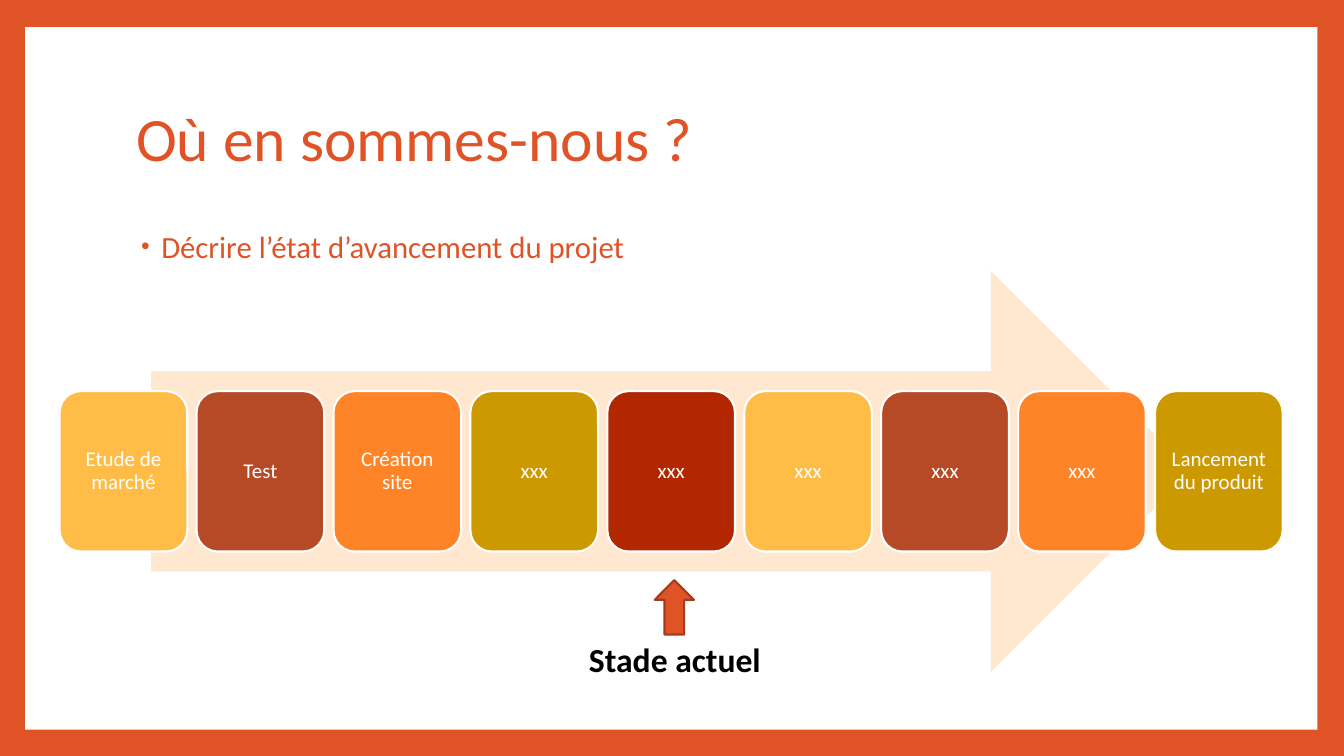
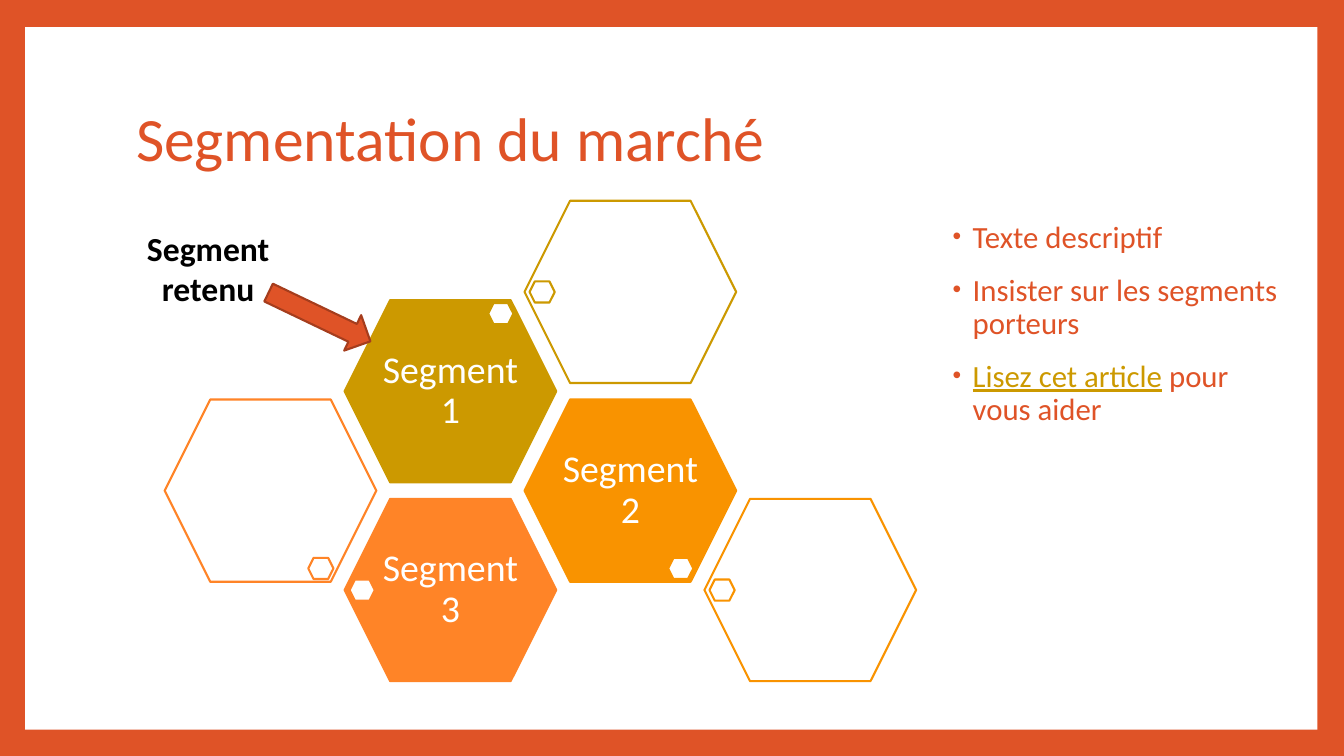
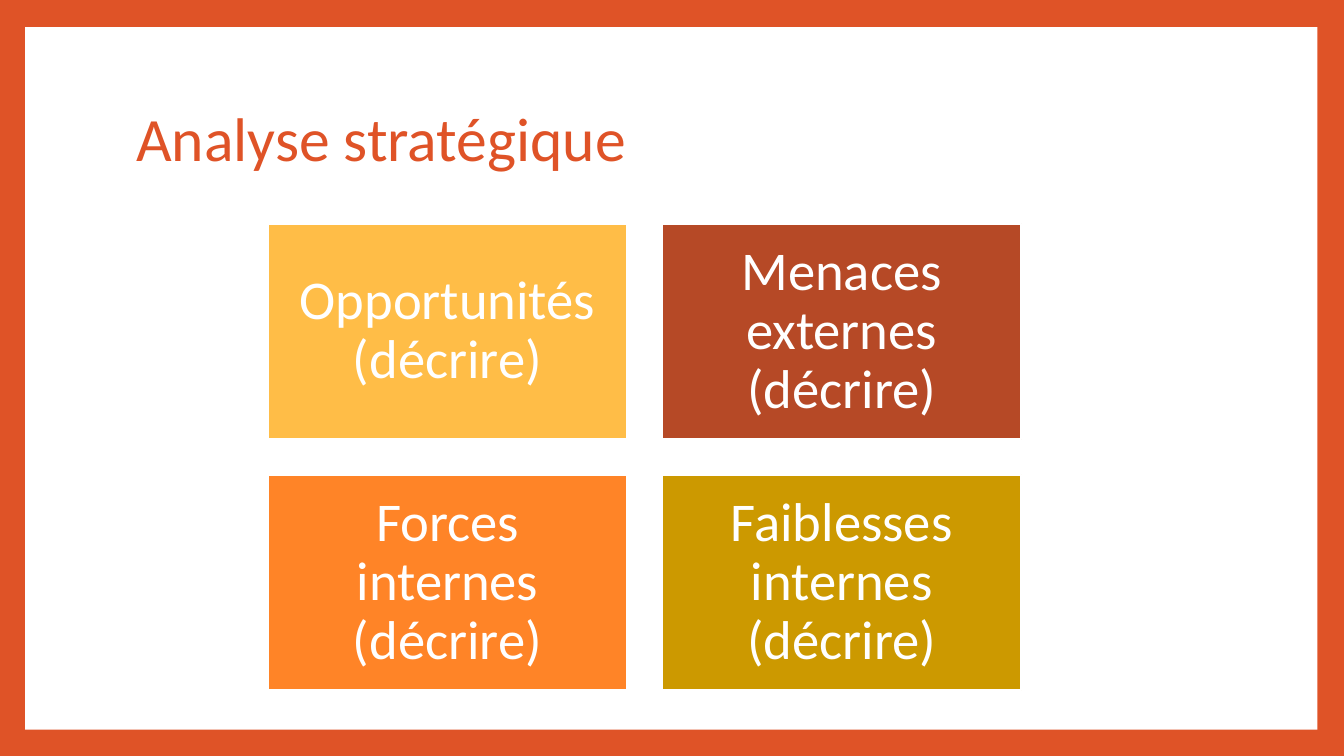
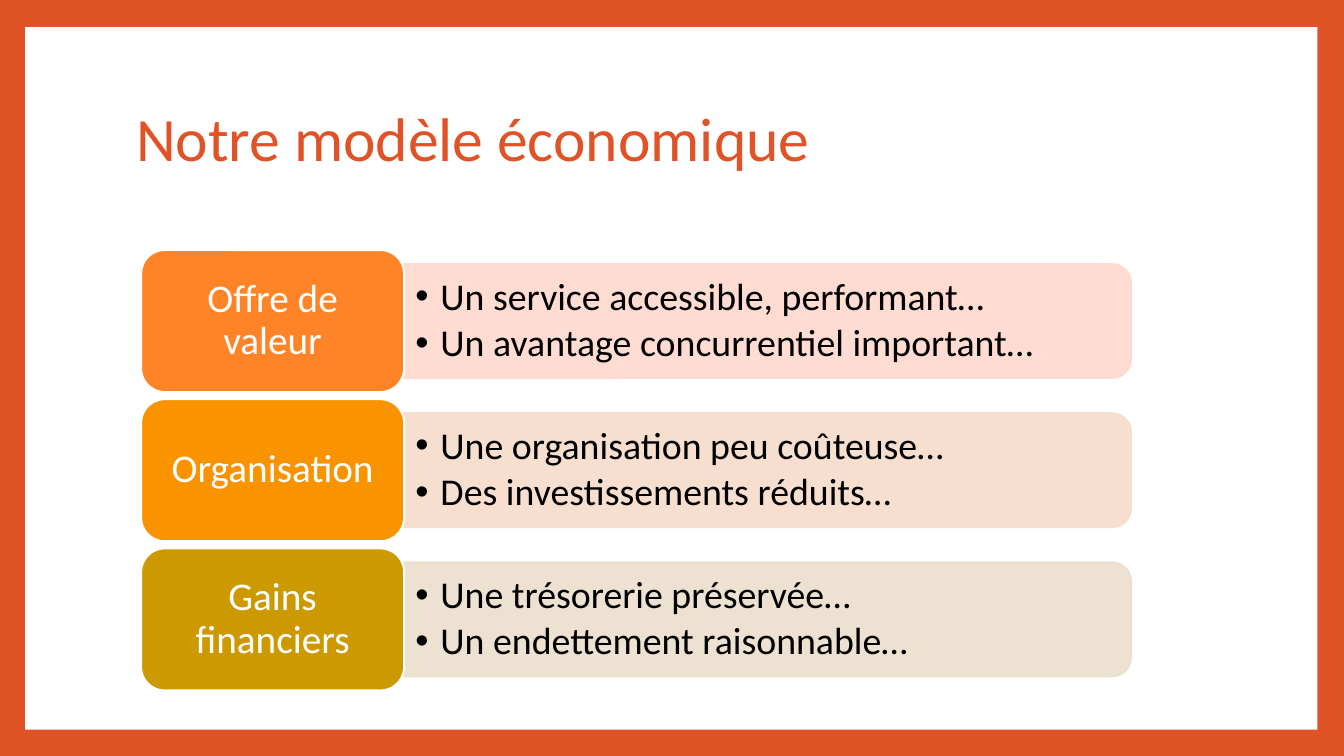
from pptx import Presentation
from pptx.dml.color import RGBColor
from pptx.enum.shapes import MSO_SHAPE as Form
from pptx.enum.text import MSO_ANCHOR as Anchor, PP_ALIGN as Align
from pptx.oxml.ns import qn
from pptx.util import Inches, Pt
from lxml.etree import SubElement

FLAME = RGBColor(0xDF, 0x53, 0x27)
RUST = RGBColor(0xA5, 0x3D, 0x1D)
WHITE = RGBColor(0xFF, 0xFF, 0xFF)
BLACK = RGBColor(0, 0, 0)
PEACH = RGBColor(0xFF, 0xE8, 0xCF)
YELLOW = RGBColor(0xFF, 0xBD, 0x47)
BRICK = RGBColor(0xB6, 0x49, 0x26)
ORANGE = RGBColor(0xFF, 0x84, 0x27)
GOLD = RGBColor(0xCC, 0x99, 0x00)
CRIMSON = RGBColor(0xB2, 0x26, 0x00)
AMBER = RGBColor(0xF9, 0x93, 0x00)
PALE_ROSE = RGBColor(0xFF, 0xD9, 0xCD)
PALE_ORANGE = RGBColor(0xF7, 0xDC, 0xCB)
PALE_GOLD = RGBColor(0xEC, 0xDE, 0xCC)

COLUMNS, ROWS = 160, 90
DEFAULT_INSETS = (1.2, 0.6)


class Deck:
    font = "Calibri"
    outline = Pt(1.5)

    def __init__(self):
        self.show = Presentation()
        self.show.slide_width = Inches(13.33)
        self.show.slide_height = Inches(7.5)
        backdrop = self.show.slide_master.background.fill
        backdrop.solid()
        backdrop.fore_color.rgb = FLAME

    def across(self, columns):
        return round(self.show.slide_width * columns / COLUMNS)

    def down(self, rows):
        return round(self.show.slide_height * rows / ROWS)

    def place(self, frame):
        return [size(part) for size, part in
                zip((self.across, self.down) * 2, frame)]

    def page(self, title):
        self.slide = self.show.slides.add_slide(self.show.slide_layouts[6])
        self.shape(Form.RECTANGLE, (3, 3.24, 153.84, 83.64), WHITE)
        heading = self.text((15, 8, 129.6, 17.8), Anchor.MIDDLE)
        self.fill_in(heading, [title], 44, FLAME, line_spacing=0.9)

    def shape(self, form, frame, fill, line=None, turn=0, opacity=None):
        shape = self.slide.shapes.add_shape(form, *self.place(frame))
        shape.shadow.inherit = False
        shape.rotation = turn
        shape.fill.solid()
        shape.fill.fore_color.rgb = fill
        if line is None:
            shape.line.fill.background()
        else:
            shape.line.color.rgb = line
            shape.line.width = self.outline
        if opacity:
            for tone in shape._element.spPr.iter(qn("a:srgbClr")):
                SubElement(tone, qn("a:alpha"), val=str(opacity * 1000))
        return shape

    def text(self, frame, anchor=Anchor.TOP):
        box = self.slide.shapes.add_textbox(*self.place(frame))
        return self.fit(box, DEFAULT_INSETS, anchor)

    def fit(self, shape, insets, anchor=Anchor.MIDDLE):
        side, edge = self.across(insets[0]), self.down(insets[1])
        settings = {"word_wrap": True, "vertical_anchor": anchor,
                    "margin_left": side, "margin_right": side,
                    "margin_top": edge, "margin_bottom": edge}
        for name, value in settings.items():
            setattr(shape.text_frame, name, value)
        return shape

    def fill_in(self, shape, lines, size, color, bold=False, **spacing):
        frame = shape.text_frame
        paragraphs = [frame.paragraphs[0]]
        paragraphs += [frame.add_paragraph() for _ in lines[1:]]
        for paragraph, line in zip(paragraphs, lines):
            for name, value in spacing.items():
                setattr(paragraph, name, value)
            for part in [line] if isinstance(line, str) else line:
                words, accent = (part, None) if isinstance(part, str) else part
                run = paragraph.add_run()
                run.text = words
                settings = {"name": self.font, "size": Pt(size), "bold": bold,
                            "underline": True if accent else None}
                for name, value in settings.items():
                    setattr(run.font, name, value)
                run.font.color.rgb = accent or color
        return paragraphs

    def bullet(self, paragraphs, color, hang, percent):
        for paragraph in paragraphs:
            layout = paragraph._p.get_or_add_pPr()
            layout.set("marL", str(self.across(3)))
            layout.set("indent", str(-self.across(hang)))
            tint = SubElement(layout, qn("a:buClr"))
            SubElement(tint, qn("a:srgbClr"), val=str(color))
            SubElement(layout, qn("a:buSzPct"), val=str(percent * 1000))
            SubElement(layout, qn("a:buFont"), typeface="Arial")
            SubElement(layout, qn("a:buChar"), char="•")

    def body(self, frame, lines):
        points = self.fill_in(self.text(frame), lines, 22, FLAME,
                              line_spacing=0.9, space_before=Pt(14))
        self.bullet(points, FLAME, 2.4, 80)

    def block(self, form, frame, label, size, fill, line=WHITE,
              insets=(0.72, 0.72)):
        block = self.fit(self.shape(form, frame, fill, line), insets)
        self.fill_in(block, [label], size, WHITE,
                     alignment=Align.CENTER, line_spacing=0.9)

    def detail_bar(self, frame, lines, fill):
        left, top, width, height = frame
        shift = (width - height) / 2
        self.shape(Form.ROUND_2_SAME_RECTANGLE,
                   (left + shift, top - shift, height, width),
                   fill, fill, 90, 90)
        details = self.fit(self.text(frame), (1.32, 0.72))
        points = self.fill_in(details, lines, 27, BLACK,
                              line_spacing=0.9, space_after=Pt(4))
        self.bullet(points, BLACK, 3, 100)

    def pointer(self, left, top, length, turn):
        self.shape(Form.RIGHT_ARROW, (left, top, length, 4.68),
                   FLAME, RUST, turn)

    def caption(self, left, top, words):
        note = self.text((left, top, 23.16, 10.92))
        self.fill_in(note, [words], 24, BLACK, True, alignment=Align.CENTER)


def progress(deck):
    deck.page("Où en sommes-nous ?")
    deck.body((15, 27, 129.6, 53), ["Décrire l’état d’avancement du projet"])
    deck.shape(Form.RIGHT_ARROW, (18, 32.25, 123.85, 47.75), PEACH)
    steps = ["Etude de marché", "Test", "Création site", *["xxx"] * 5,
             "Lancement du produit"]
    tones = [YELLOW, BRICK, ORANGE, GOLD, CRIMSON]
    for index, step in enumerate(steps):
        deck.block(Form.ROUNDED_RECTANGLE,
                   (7.1 + 16.3 * index, 46.56, 15.2, 19.1),
                   step, 15, tones[index % len(tones)])
    deck.pointer(77.04, 69.96, 6.48, 270)
    deck.caption(68.76, 75.48, "Stade actuel")


def segmentation(deck):
    deck.page("Segmentation du marché")
    left, low, high = (0.6, 9.6), (17.1, 18.85), (17.1, 0.36)
    cells = [(1, 3, "Segment 3", ORANGE, left), (0, 2, "", ORANGE, low),
             (2, 2, "Segment 2", AMBER, low), (3, 3, "", AMBER, left),
             (1, 1, "Segment 1", GOLD, high), (2, 0, "", GOLD, left)]
    for column, row, segment, tone, (dot_x, dot_y) in cells:
        x, y = 19.6 + 21.42 * column, 23.9 + 11.83 * row
        cell = (x, y, 25.2, 21.7)
        if segment:
            deck.block(Form.HEXAGON, cell, segment, 27, tone, tone, (0, 0.48))
        else:
            deck.shape(Form.HEXAGON, cell, WHITE, tone)
        deck.shape(Form.HEXAGON, (x + dot_x, y + dot_y, 3, 2.52), WHITE, tone)
    deck.body((111.6, 25.8, 41.9, 53),
              ["Texte descriptif", "Insister sur les segments porteurs",
               [("Lisez cet article", GOLD), " pour vous aider"]])
    deck.pointer(31.32, 35.4, 13.44, 25.6)
    deck.caption(13.2, 26.52, "Segment retenu")


def strategy(deck):
    deck.page("Analyse stratégique")
    quadrants = [("Opportunités (décrire)", YELLOW),
                 ("Menaces externes (décrire)", BRICK),
                 ("Forces internes (décrire)", ORANGE),
                 ("Faiblesses internes (décrire)", GOLD)]
    for index, (label, tone) in enumerate(quadrants):
        row, column = divmod(index, 2)
        deck.block(Form.RECTANGLE,
                   (31.92 + 46.92 * column, 26.64 + 29.88 * row, 42.72, 25.68),
                   label, 39, tone, insets=(1.92, 1.92))


def business_model(deck):
    deck.page("Notre modèle économique")
    pillars = [
        ("Offre de valeur", ORANGE, PALE_ROSE,
         ["Un service accessible, performant…",
          "Un avantage concurrentiel important…"]),
        ("Organisation", AMBER, PALE_ORANGE,
         ["Une organisation peu coûteuse…", "Des investissements réduits…"]),
        ("Gains financiers", GOLD, PALE_GOLD,
         ["Une trésorerie préservée…", "Un endettement raisonnable…"])]
    for index, (pillar, tone, pale, details) in enumerate(pillars):
        top = 29.76 + 17.76 * index
        deck.detail_bar((48.12, top + 1.68, 86.52, 13.56), details, pale)
        deck.block(Form.ROUNDED_RECTANGLE, (16.8, top, 31.32, 16.92),
                   pillar, 28, tone, insets=(1.44, 0.72))


def main():
    deck = Deck()
    for build in (progress, segmentation, strategy, business_model):
        build(deck)
    deck.show.save("out.pptx")


if __name__ == "__main__":
    main()
